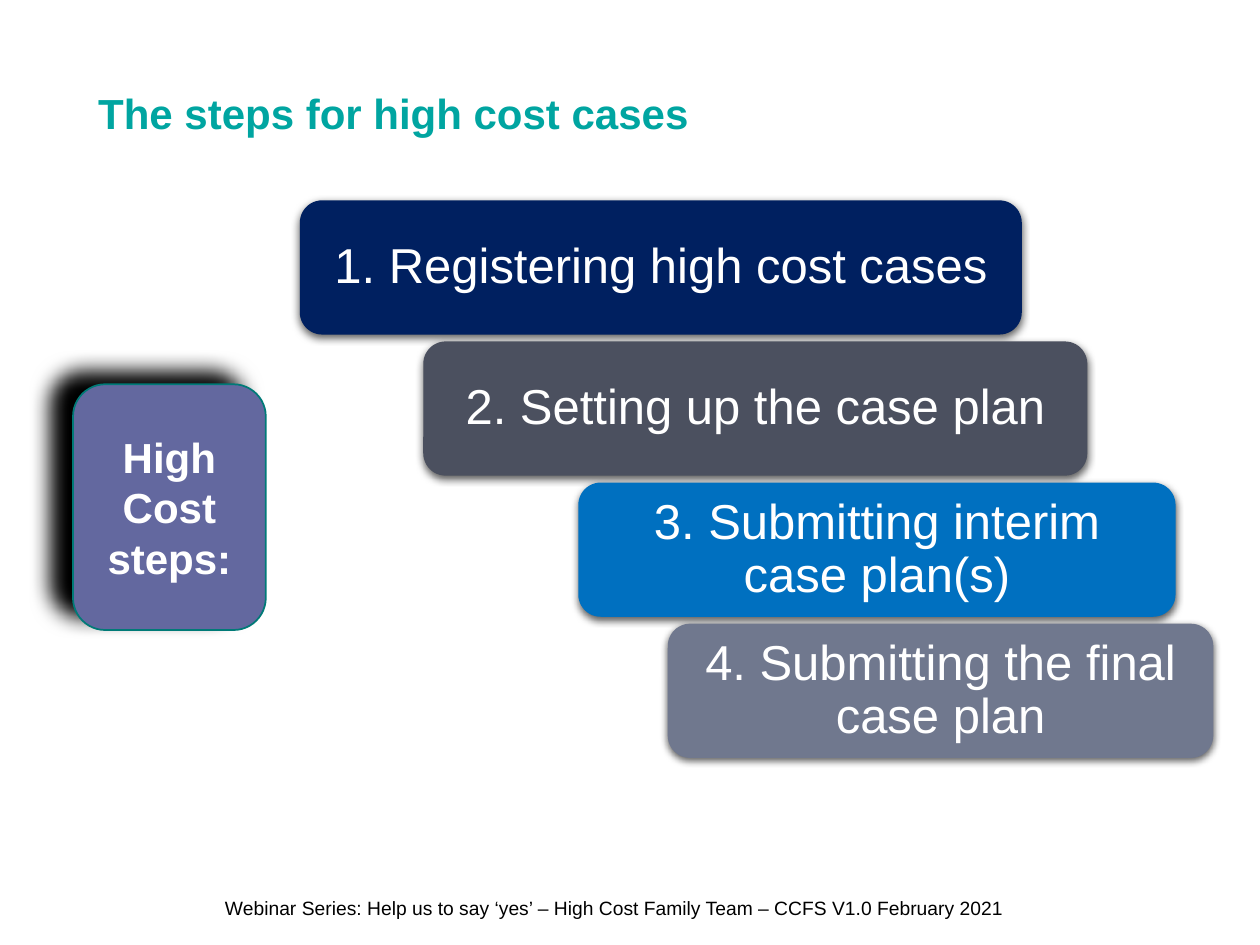
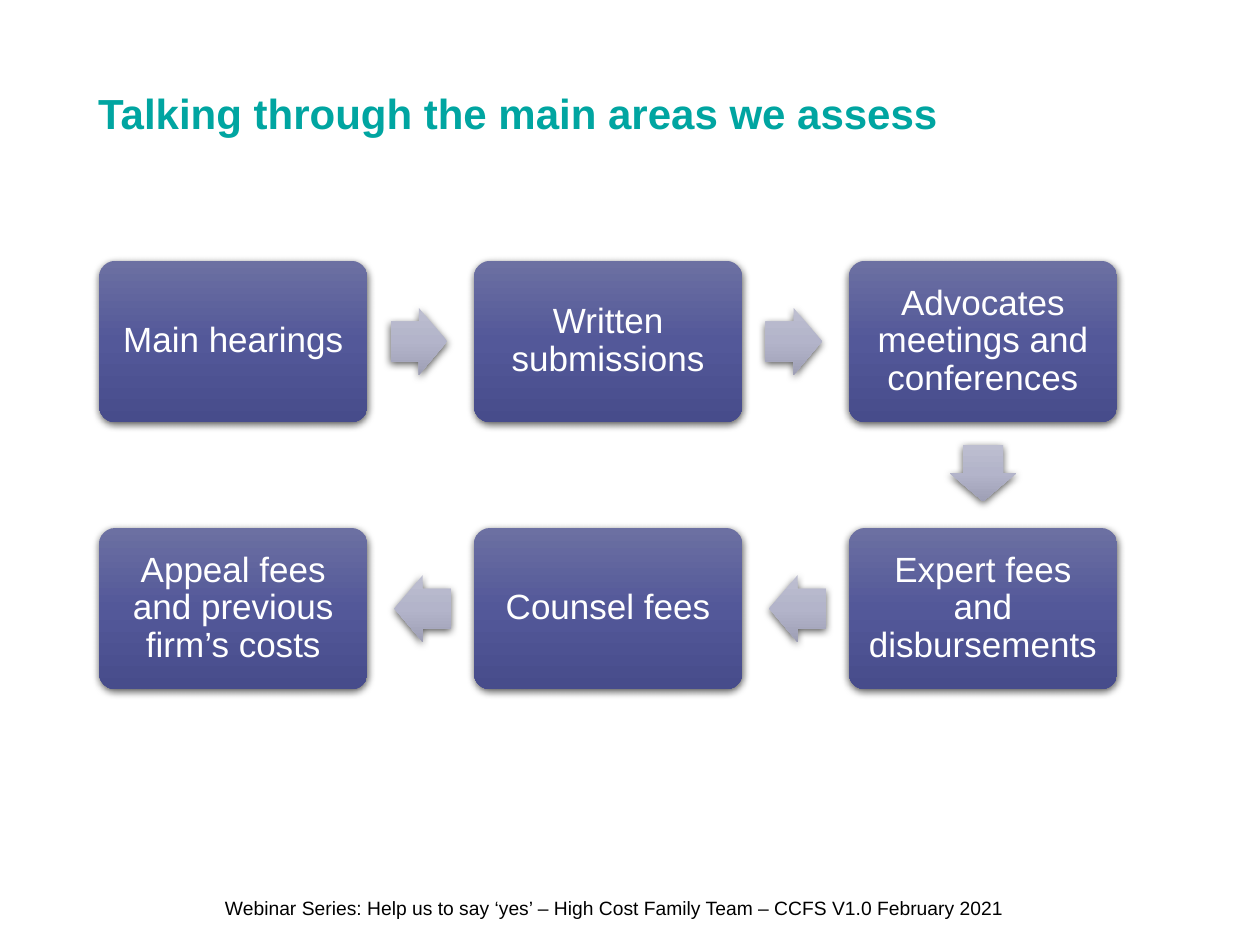
"""Build two slides on high cost cases: the case steps and the assessed areas."""
import math
from dataclasses import dataclass

from lxml import etree
from pptx import Presentation, util as u
from pptx.dml.color import RGBColor
from pptx.enum import shapes, text
from pptx.oxml import ns

COLUMNS, ROWS = 100, 75
UNIT = u.Inches(10) // COLUMNS
FOOTER = "Webinar Series: Help us to say ‘yes’ – High Cost Family Team – CCFS V1.0 February 2021"


@dataclass(frozen=True)
class Theme:
    """Colours, type sizes and shadows of the deck."""
    font: str = "Arial"
    title: str = "00A5A1"
    ink: str = "000000"
    paper: str = "FFFFFF"
    label: str = "63689F"
    label_edge: str = "007A77"
    steps: tuple = ("002060", "4B505F", "0070C0", "70788E")
    node: tuple = ("6C70A2", "535899", "474C8B")
    arrow: tuple = ("BDBED0", "B3B4CA", "9E9FB5")
    title_size: int = 24
    step_size: int = 28
    node_size: int = 20
    footer_size: int = 11
    soft_shadow: tuple = (63, 4.5, 1.5, 90)
    hard_shadow: tuple = (100, 12, 15, 210)


@dataclass(frozen=True)
class Box:
    """A region measured in grid columns and rows."""
    x: float
    y: float
    w: float
    h: float

    def inner(self, x, y, w, h):
        """Return a box placed relative to this one."""
        return Box(self.x + x, self.y + y, w, h)

    def center(self):
        """Return the middle point."""
        return self.x + self.w / 2, self.y + self.h / 2

    def emu(self):
        """Return left, top, width and height as lengths."""
        return [u.Emu(round(v * UNIT)) for v in (self.x, self.y, self.w, self.h)]


THEME = Theme()
PAGE = Box(0, 0, COLUMNS, ROWS)


def write(s, words, size, color, align, anchor, inset=(0, 0), bold=False, spacing=1.0):
    """Fill a shape with one formatted paragraph."""
    tf = s.text_frame
    tf.word_wrap = True
    tf.vertical_anchor = anchor
    tf.margin_left = tf.margin_right = u.Inches(inset[0])
    tf.margin_top = tf.margin_bottom = u.Inches(inset[1])
    p = tf.paragraphs[0]
    p.alignment = align
    p.line_spacing = spacing
    r = p.add_run()
    r.text = words
    r.font.name = THEME.font
    r.font.size = u.Pt(size)
    r.font.bold = bold
    r.font.color.rgb = RGBColor.from_string(color)


def write_centered(s, words, size, inset, **style):
    """Write paper-coloured words in the middle of a shape."""
    write(s, words, size, THEME.paper, text.PP_ALIGN.CENTER,
          text.MSO_ANCHOR.MIDDLE, inset, **style)


def add_color(parent, value):
    """Append a colour element."""
    return etree.SubElement(parent, ns.qn("a:srgbClr"), val=value)


def paint(s, fill):
    """Fill a shape with one colour or an even top-down gradient."""
    if isinstance(fill, str):
        s.fill.solid()
        s.fill.fore_color.rgb = RGBColor.from_string(fill)
        return
    s.fill.gradient()
    s.fill.gradient_angle = 270
    grad = s._element.spPr.find(ns.qn("a:gradFill"))
    grad.set("rotWithShape", "0")
    stops = grad.find(ns.qn("a:gsLst"))
    for stop in list(stops):
        stops.remove(stop)
    for i, color in enumerate(fill):
        place = str(100000 * i // (len(fill) - 1))
        add_color(etree.SubElement(stops, ns.qn("a:gs"), pos=place), color)


def cast_shadow(s, alpha, blur, distance, angle):
    """Give a shape an outer shadow."""
    s.shadow.inherit = False
    effects = s._element.spPr.find(ns.qn("a:effectLst"))
    outer = etree.SubElement(
        effects, ns.qn("a:outerShdw"), blurRad=str(u.Pt(blur)), dist=str(u.Pt(distance)),
        dir=str(angle * 60000), algn="ctr", rotWithShape="0")
    color = add_color(outer, THEME.ink)
    etree.SubElement(color, ns.qn("a:alpha"), val=str(alpha * 1000))


def add_shape(sp, kind, box, fill, shadow=THEME.soft_shadow, adjust=()):
    """Add a filled shape without outline."""
    s = sp.add_shape(kind, *box.emu())
    for i, value in enumerate(adjust):
        s.adjustments[i] = value
    paint(s, fill)
    s.line.fill.background()
    cast_shadow(s, *shadow)
    return s


def add_frame(prs, title):
    """Add a slide with the shared title and footer."""
    sp = prs.slides.add_slide(prs.slide_layouts[6]).shapes
    head = sp.add_textbox(*PAGE.inner(7.8, 7.4, 84.4, 3.8).emu())
    write(head, title, THEME.title_size, THEME.title, text.PP_ALIGN.LEFT,
          text.MSO_ANCHOR.TOP, bold=True, spacing=0.9)
    foot = sp.add_textbox(*PAGE.inner(11.1, 69.2, 68.6, 3.8).emu())
    write(foot, FOOTER, THEME.footer_size, THEME.ink, text.PP_ALIGN.RIGHT,
          text.MSO_ANCHOR.BOTTOM)
    return sp


def add_label(sp, box, words):
    """Add the outlined label beside the steps."""
    s = add_shape(sp, shapes.MSO_SHAPE.ROUNDED_RECTANGLE, box, THEME.label, THEME.hard_shadow)
    s.line.color.rgb = RGBColor.from_string(THEME.label_edge)
    s.line.width = u.Pt(1)
    write_centered(s, words, THEME.title_size, (0.1, 0.05), bold=True)


def add_steps(sp, box, steps):
    """Stack the numbered steps, each indented further."""
    pitch, height = 11.2, 10.65
    for i, (indent, width, words) in enumerate(steps):
        bar = box.inner(indent, i * pitch, width, height)
        s = add_shape(sp, shapes.MSO_SHAPE.ROUNDED_RECTANGLE, bar, THEME.steps[i])
        write_centered(s, f"{i + 1}. {words}", THEME.step_size, (0.12, 0.06), spacing=0.9)


def add_arrow(sp, start, end):
    """Point an arrow from one node to the next, set slightly back from midway."""
    width, height, setback = 4.5, 5.3, 0.15
    (x1, y1), (x2, y2) = start.center(), end.center()
    angle = math.atan2(y2 - y1, x2 - x1)
    x = (x1 + x2) / 2 - setback * math.cos(angle)
    y = (y1 + y2) / 2 - setback * math.sin(angle)
    s = add_shape(sp, shapes.MSO_SHAPE.RIGHT_ARROW,
                  Box(x - width / 2, y - height / 2, width, height),
                  THEME.arrow, adjust=(0.6, 0.5))
    s.rotation = math.degrees(angle)


def add_flow(sp, box, areas, columns=3):
    """Lay the areas out in a snake of nodes joined by arrows."""
    width, height = 21.3, 12.8
    rows = math.ceil(len(areas) / columns)
    dx = (box.w - width) / (columns - 1)
    dy = (box.h - height) / (rows - 1)
    nodes = []
    for i, words in enumerate(areas):
        row, column = divmod(i, columns)
        if row % 2:
            column = columns - 1 - column
        node = box.inner(column * dx, row * dy, width, height)
        s = add_shape(sp, shapes.MSO_SHAPE.ROUNDED_RECTANGLE, node, THEME.node, adjust=(0.1,))
        write_centered(s, words, THEME.node_size, (0.08, 0.08), spacing=0.9)
        nodes.append(node)
    for start, end in zip(nodes, nodes[1:]):
        add_arrow(sp, start, end)


def steps_slide(prs):
    """Build the slide of case steps."""
    sp = add_frame(prs, "The steps for high cost cases")
    add_steps(sp, PAGE.inner(23.8, 15.9, 72.5, 44.3), (
        (0, 57.3, "Registering high cost cases"),
        (9.8, 52.7, "Setting up the case plan"),
        (22.1, 47.4, "Submitting interim case plan(s)"),
        (29.2, 43.3, "Submitting the final case plan"),
    ))
    add_label(sp, PAGE.inner(5.8, 30.5, 15.3, 19.5), "High Cost steps:")


def areas_slide(prs):
    """Build the slide of assessed areas."""
    sp = add_frame(prs, "Talking through the main areas we assess")
    add_flow(sp, PAGE.inner(7.87, 20.7, 80.8, 34), (
        "Main hearings",
        "Written submissions",
        "Advocates meetings and conferences",
        "Expert fees and disbursements",
        "Counsel fees",
        "Appeal fees and previous firm’s costs",
    ))


def main():
    """Build and save the deck."""
    prs = Presentation()
    prs.slide_width, prs.slide_height = COLUMNS * UNIT, ROWS * UNIT
    steps_slide(prs)
    areas_slide(prs)
    prs.save("out.pptx")


if __name__ == "__main__":
    main()
